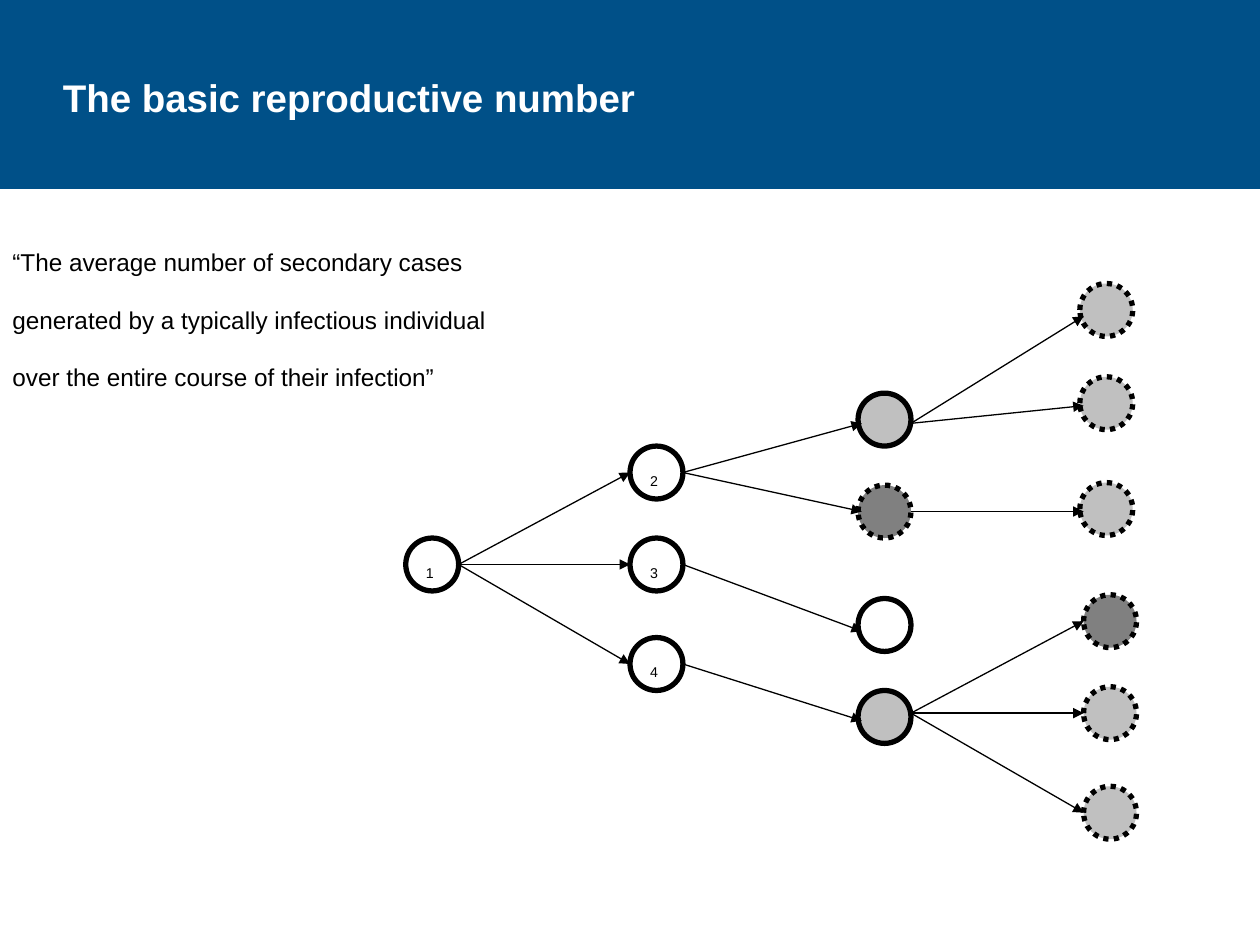
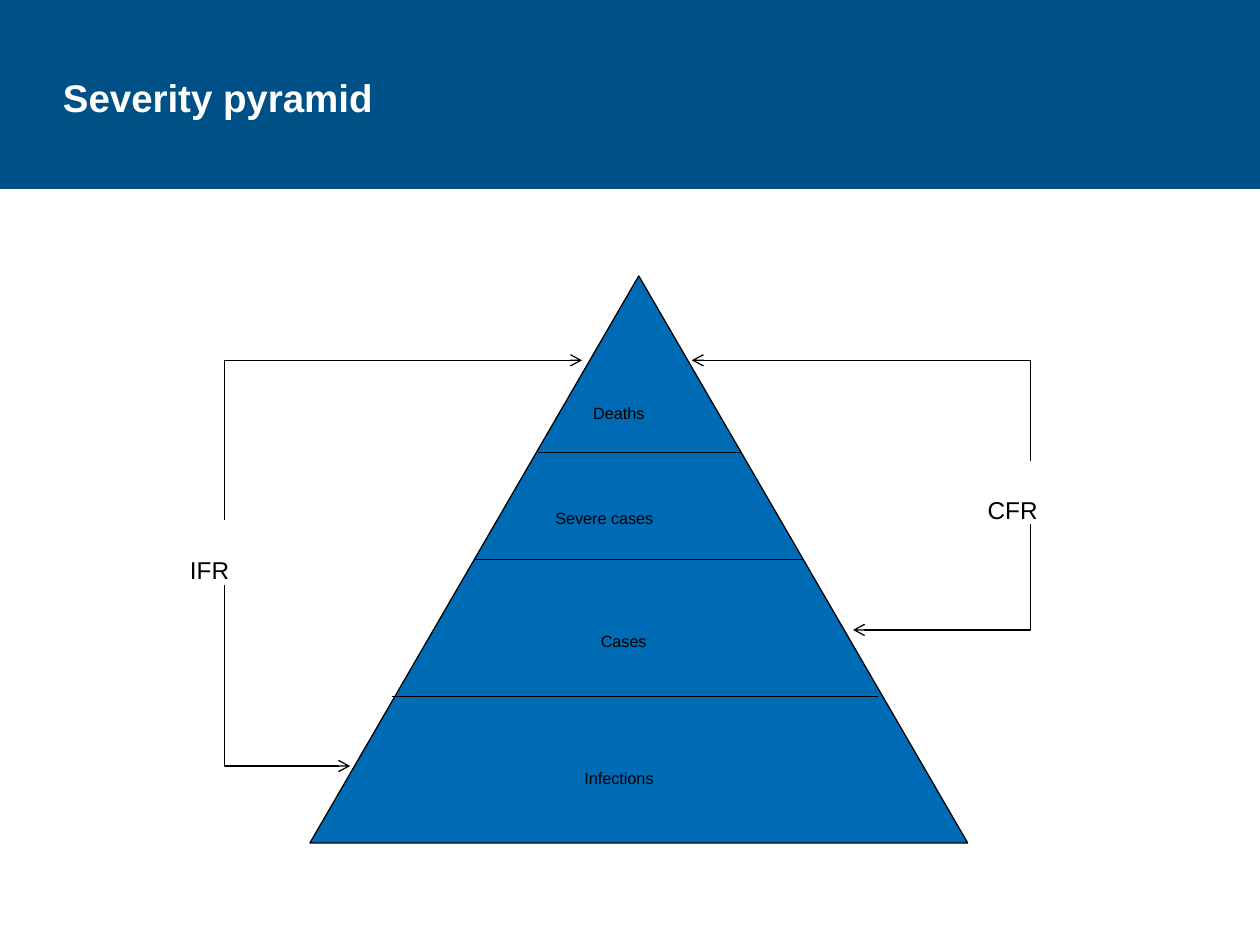
from lxml.etree import SubElement
from pptx import Presentation
from pptx.dml.color import RGBColor
from pptx.enum.dml import MSO_LINE
from pptx.enum.shapes import MSO_CONNECTOR as Link, MSO_SHAPE as Shape
from pptx.enum.text import MSO_ANCHOR as Anchor, MSO_AUTO_SIZE as AutoSize, PP_ALIGN as Align
from pptx.oxml.ns import qn
from pptx.util import Emu, Pt

PX = 9144  # 100 px to the inch
FONT = "Arial"
BLACK, WHITE = "000000", "FFFFFF"
BAND, PYRAMID = "005088", "006BB5"
LIGHT, DARK = "C0C0C0", "808080"

DEFINITION = ("“The average number of secondary cases generated by a typically "
              "infectious individual over the entire course of their infection”")
CASE_SIZE = 42
# left, top, fill, dotted outline, label
CASES = [
    (322, 427, None, False, "1"),
    (500, 354, None, False, "2"),
    (500, 427, None, False, "3"),
    (500, 506, None, False, "4"),
    (681, 312, LIGHT, False, ""),
    (681, 385, DARK, True, ""),
    (681, 475, None, False, ""),
    (681, 548, LIGHT, False, ""),
    (857, 225, LIGHT, True, ""),
    (857, 299, LIGHT, True, ""),
    (857, 383, LIGHT, True, ""),
    (860, 472, DARK, True, ""),
    (860, 545, LIGHT, True, ""),
    (860, 624, LIGHT, True, ""),
]
# start x, end x, {start y: end ys} for each generation
INFECTIONS = [
    (364, 500, {448: [375, 448, 527]}),
    (542, 684, {375: [336, 406], 448: [501], 527: [572]}),
    (723, 860, {336: [251, 322], 406: [406], 566: [493, 566, 645]}),
]

# text, left, top, width, height, size
PYRAMID_LABELS = [
    ("Infections", 454, 590, 116, 37, 16),
    ("Cases", 467, 481, 84, 37, 16),
    ("Severe cases", 431, 384, 156, 37, 16),
    ("Deaths", 461, 300, 91, 37, 16),
    ("IFR", 141, 413, 74, 50, 24),
    ("CFR", 774, 366, 89, 50, 24),
]
LEVEL_LINES = [(311, 697, 553), (376, 637, 444), (427, 589, 359)]  # left, right, y
# arrow tip x, y, then label end x, y
RATIO_ARROWS = [
    (462, 286, 178, 413),
    (278, 608, 178, 464),
    (549, 286, 818, 366),
    (677, 500, 818, 416),
]


def px(*lengths):
    return [Emu(length * PX) for length in lengths]


def color(hex_value):
    return RGBColor.from_string(hex_value)


def write(box, text, size, hex_value=BLACK, bold=False, lowered=True):
    """Fill the box with one left-aligned paragraph, as subscript if lowered."""
    box.text_frame.text = text
    para = box.text_frame.paragraphs[0]
    para.alignment = Align.LEFT
    font = para.runs[0].font
    font.name, font.size, font.bold = FONT, Pt(size), bold
    font.color.rgb = color(hex_value)
    if lowered:
        para.runs[0].font._element.set("baseline", "-25000")
    return para


def add_text(page, bounds, text, size, wrap=False, **style):
    box = page.shapes.add_textbox(*px(*bounds))
    para = write(box, text, size, **style)
    box.text_frame.word_wrap = wrap
    if not wrap:
        box.text_frame.auto_size = AutoSize.SHAPE_TO_FIT_TEXT
    return box, para


def add_figure(page, kind, bounds, fill=None, line_width=None):
    figure = page.shapes.add_shape(kind, *px(*bounds))
    figure.shadow.inherit = False
    if fill:
        figure.fill.solid()
        figure.fill.fore_color.rgb = color(fill)
    else:
        figure.fill.background()
    if line_width:
        figure.line.color.rgb = color(BLACK)
        figure.line.width = Pt(line_width)
    else:
        figure.line.fill.background()
    return figure


def add_line(page, ends, kind=Link.STRAIGHT, **arrowheads):
    """Draw a thin line; arrowheads are given as headEnd= or tailEnd=."""
    line = page.shapes.add_connector(kind, *px(*ends))
    line.line.color.rgb = color(BLACK)
    line.line.width = Pt(0.75)
    for end, head in arrowheads.items():
        SubElement(line.line._get_or_add_ln(), qn(f"a:{end}"), type=head)
    SubElement(line._element.spPr, qn("a:effectLst"))
    return line


def add_page(deck, title):
    page = deck.slides.add_slide(deck.slide_layouts[6])
    add_figure(page, Shape.RECTANGLE, (0, 0, 1000, 150), BAND)
    box, para = add_text(page, (50, 0, 714, 151), title, 22, wrap=True,
                         hex_value=WHITE, bold=True, lowered=False)
    frame = box.text_frame
    frame.margin_left = frame.margin_right = frame.margin_top = frame.margin_bottom = 0
    frame.vertical_anchor = Anchor.MIDDLE
    para.line_spacing = 1.1
    return page


def build_reproduction(deck):
    page = add_page(deck, "The basic reproductive number")
    add_text(page, (0, 169, 406, 242), DEFINITION, 24, wrap=True)
    for left, top, fill, dotted, label in CASES:
        case = add_figure(page, Shape.OVAL, (left, top, CASE_SIZE, CASE_SIZE), fill, 3)
        if dotted:
            case.line.dash_style = MSO_LINE.ROUND_DOT
        if label:
            write(case, label, 14)
            case.text_frame.word_wrap = False
            case.text_frame.vertical_anchor = Anchor.MIDDLE
    for start_x, end_x, branches in INFECTIONS:
        for start_y, end_ys in branches.items():
            for end_y in end_ys:
                add_line(page, (start_x, start_y, end_x, end_y), tailEnd="triangle")


def build_pyramid(deck):
    page = add_page(deck, "Severity pyramid")
    add_figure(page, Shape.ISOSCELES_TRIANGLE, (246, 219, 522, 450), PYRAMID, 0.75)
    for text, *bounds, size in PYRAMID_LABELS:
        add_text(page, bounds, text, size)
    for left, right, y in LEVEL_LINES:
        add_line(page, (left, y, right, y))
    for ends in RATIO_ARROWS:
        elbow = add_line(page, ends, Link.ELBOW, headEnd="arrow")
        elbow._element.spPr.find(qn("a:prstGeom")).set("prst", "bentConnector2")


def main():
    deck = Presentation()
    deck.slide_width, deck.slide_height = px(1000, 750)
    build_reproduction(deck)
    build_pyramid(deck)
    deck.save("out.pptx")


if __name__ == "__main__":
    main()
